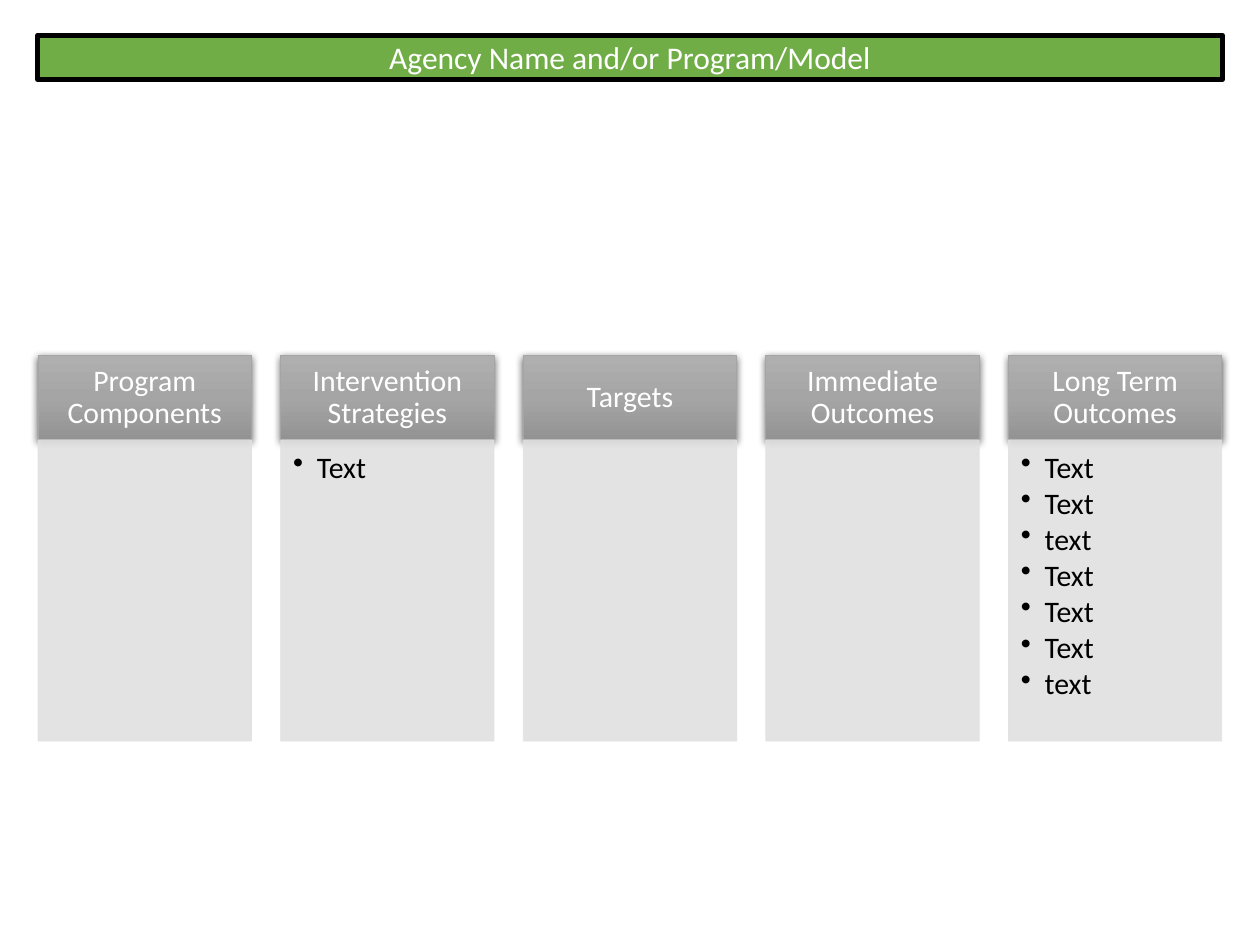
from copy import deepcopy

from pptx import Presentation
from pptx.dml.color import RGBColor
from pptx.enum.shapes import MSO_SHAPE
from pptx.enum.text import MSO_ANCHOR, PP_ALIGN
from pptx.oxml import parse_xml
from pptx.oxml.ns import nsdecls, qn
from pptx.util import Cm, Pt

WHITE = RGBColor(0xFF, 0xFF, 0xFF)
BLACK = RGBColor(0x00, 0x00, 0x00)
GREEN = RGBColor(0x70, 0xAD, 0x47)
GREY = RGBColor(0xA5, 0xA5, 0xA5)
PALE_GREY = RGBColor(0xE1, 0xE1, 0xE1)
HEADER_GRADIENT = [RGBColor(0xAF, 0xAF, 0xAF), GREY, RGBColor(0x93, 0x93, 0x93)]

COLUMNS = [
    ("Program Components", []),
    ("Intervention Strategies", ["Text"]),
    ("Targets", []),
    ("Immediate Outcomes", []),
    ("Long Term Outcomes", ["Text", "Text", "text", "Text", "Text", "Text", "text"]),
]
COLUMN_LEFT, COLUMN_PITCH, COLUMN_WIDTH = 0.77, 4.89, 4.3
HEADER_TOP, HEADER_HEIGHT = 7.16, 1.71
BODY_HEIGHT = 6.07

TITLE_FRAME = {"vertical_anchor": MSO_ANCHOR.MIDDLE, "word_wrap": True}
HEADER_FRAME = {
    **TITLE_FRAME,
    "margin_left": Cm(0.33), "margin_right": Cm(0.33),
    "margin_top": Cm(0.2), "margin_bottom": Cm(0.2),
}
BODY_FRAME = {
    "vertical_anchor": MSO_ANCHOR.TOP, "word_wrap": True,
    "margin_left": Cm(0.25), "margin_right": Cm(0.33),
    "margin_top": Cm(0.25), "margin_bottom": Cm(0.38),
}
TITLE_PARAGRAPH = {"alignment": PP_ALIGN.CENTER}
HEADER_PARAGRAPH = {"alignment": PP_ALIGN.CENTER, "line_spacing": 0.9}
BODY_PARAGRAPH = {
    "alignment": PP_ALIGN.LEFT, "level": 1,
    "line_spacing": 0.9, "space_after": Pt(2.25),
}
TITLE_FONT = {"name": "Calibri", "size": Pt(18)}
COLUMN_FONT = {"name": "Calibri", "size": Pt(17)}


def set_values(target, values):
    """Set each named attribute of the target."""
    for name, value in values.items():
        setattr(target, name, value)


def set_line(shape, color, width):
    """Give the shape a solid outline."""
    shape.line.color.rgb = color
    shape.line.width = Pt(width)


def write_paragraph(paragraph, text, values, font, color):
    """Write one formatted paragraph."""
    set_values(paragraph, values)
    run = paragraph.add_run()
    run.text = text
    set_values(run.font, font)
    run.font.color.rgb = color


def add_bullet(paragraph):
    """Give the paragraph a hanging round bullet."""
    properties = paragraph._p.get_or_add_pPr()
    properties.set("marL", str(Cm(0.48)))
    properties.set("indent", str(-Cm(0.48)))
    properties.append(parse_xml(f'<a:buChar {nsdecls("a")} char="•"/>'))


def fill_gradient(shape, colors):
    """Fill the shape from top to bottom with evenly spaced colours."""
    shape.fill.gradient()
    shape.fill.gradient_angle = 270
    first_stop = shape._element.spPr.find(".//" + qn("a:gs"))
    first_stop.addnext(deepcopy(first_stop))
    for index, (stop, color) in enumerate(zip(shape.fill.gradient_stops, colors)):
        stop.color.rgb = color
        stop.position = index / (len(colors) - 1)


def add_shadow(shape):
    """Add a soft shadow below the shape."""
    shape._element.spPr.append(parse_xml(
        f'<a:effectLst {nsdecls("a")}>'
        '<a:outerShdw blurRad="57150" dist="19050" dir="5400000" algn="ctr" rotWithShape="0">'
        '<a:srgbClr val="000000"><a:alpha val="63000"/></a:srgbClr>'
        '</a:outerShdw></a:effectLst>'
    ))


def set_opacity(shape, percent):
    """Make the fill and the outline of the shape translucent."""
    for color in shape._element.spPr.iter(qn("a:srgbClr")):
        color.append(parse_xml(f'<a:alpha {nsdecls("a")} val="{percent * 1000}"/>'))


def format_title(title):
    """Turn the title placeholder into the green banner."""
    set_values(title, {"left": Cm(0.76), "top": Cm(0.71), "width": Cm(23.88), "height": Cm(0.89)})
    title.fill.solid()
    title.fill.fore_color.rgb = GREEN
    set_line(title, BLACK, 3)
    set_values(title.text_frame, TITLE_FRAME)
    write_paragraph(title.text_frame.paragraphs[0], "Agency Name and/or Program/Model",
                    TITLE_PARAGRAPH, TITLE_FONT, WHITE)


def add_header(group, left, text):
    """Add the heading box of a column."""
    header = group.shapes.add_shape(MSO_SHAPE.RECTANGLE, left, Cm(HEADER_TOP),
                                    Cm(COLUMN_WIDTH), Cm(HEADER_HEIGHT))
    fill_gradient(header, HEADER_GRADIENT)
    set_line(header, GREY, 0.5)
    add_shadow(header)
    set_values(header.text_frame, HEADER_FRAME)
    write_paragraph(header.text_frame.paragraphs[0], text, HEADER_PARAGRAPH, COLUMN_FONT, WHITE)


def add_body(group, left, items):
    """Add the bulleted box below a heading."""
    body = group.shapes.add_shape(MSO_SHAPE.RECTANGLE, left, Cm(HEADER_TOP + HEADER_HEIGHT),
                                  Cm(COLUMN_WIDTH), Cm(BODY_HEIGHT))
    body.shadow.inherit = False
    body.fill.solid()
    body.fill.fore_color.rgb = PALE_GREY
    set_line(body, PALE_GREY, 0.5)
    set_opacity(body, 90)
    frame = body.text_frame
    set_values(frame, BODY_FRAME)
    for index, item in enumerate(items):
        paragraph = frame.add_paragraph() if index else frame.paragraphs[0]
        write_paragraph(paragraph, item, BODY_PARAGRAPH, COLUMN_FONT, BLACK)
        add_bullet(paragraph)


def main():
    """Build the logic model slide and save it."""
    presentation = Presentation()
    presentation.slide_width, presentation.slide_height = Cm(25.4), Cm(19.05)
    slide = presentation.slides.add_slide(presentation.slide_layouts[5])
    format_title(slide.shapes.title)
    group = slide.shapes.add_group_shape()
    for index, (heading, items) in enumerate(COLUMNS):
        left = Cm(COLUMN_LEFT + index * COLUMN_PITCH)
        add_header(group, left, heading)
        add_body(group, left, items)
    presentation.save("out.pptx")


if __name__ == "__main__":
    main()
